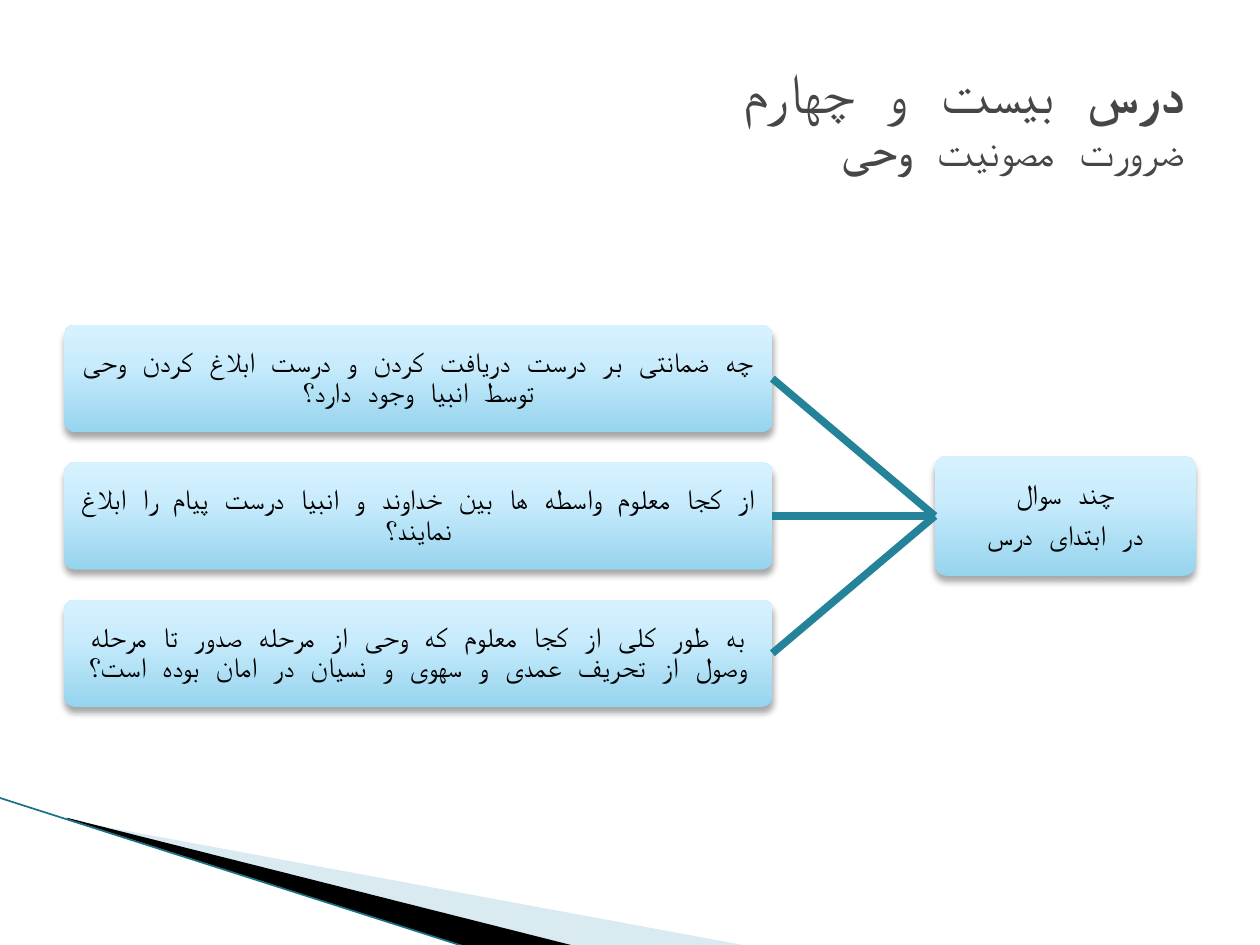
import pptx
import pptx.util
import pptx.oxml
from pptx.dml.color import RGBColor
from pptx.enum.shapes import MSO_CONNECTOR, MSO_SHAPE
from pptx.enum.text import MSO_ANCHOR, PP_ALIGN
from pptx.oxml.ns import nsdecls, qn
from pptx.util import Inches

BLACK = RGBColor(0x00, 0x00, 0x00)
GRAY = RGBColor(0x46, 0x46, 0x46)
TEAL = RGBColor(0x24, 0x82, 0x99)
EDGE = RGBColor(0x1B, 0x70, 0x82)
PALE = RGBColor(0xA0, 0xCB, 0xDC)
STOPS = [
    (0, RGBColor(0x96, 0xD4, 0xEE)),
    (65, RGBColor(0xC9, 0xEC, 0xFC)),
    (100, RGBColor(0xD7, 0xF2, 0xFF)),
]


def element(xml):
    """Parse one drawing element written as <a:tag ...>."""
    tag, rest = xml.split(" ", 1)
    return pptx.oxml.parse_xml(f"{tag} {nsdecls('a')} {rest}")


def add_text(para, text, font="Noto Sans Mono", size=16, color=BLACK, bold=False):
    """Add a formatted run of right-to-left text."""
    run = para.add_run()
    run.text = text
    run.font.name = font
    run.font.size = pptx.util.Pt(size)
    run.font.bold = bold
    run.font.color.rgb = color
    run.font._element.append(element(f'<a:cs typeface="{font}"/>'))


def set_para(para, align, **gaps):
    para.alignment = align
    para._p.get_or_add_pPr().set("rtl", "1")
    for name, value in gaps.items():
        setattr(para, name, value)


class Deck:
    def __init__(self):
        self.prs = pptx.Presentation()
        self.prs.slide_width = Inches(10)
        self.prs.slide_height = Inches(7.5)
        self.slide = self.prs.slides.add_slide(self.prs.slide_layouts[6])
        self.shapes = self.slide.shapes

    def wedge(self, points, color, alpha=100):
        spots = [(Inches(x), Inches(y)) for x, y in points]
        form = self.shapes.build_freeform(*spots[0])
        form.add_line_segments(spots[1:])
        shape = form.convert_to_shape()
        shape.shadow.inherit = False
        shape.fill.solid()
        shape.fill.fore_color.rgb = color
        shape.line.fill.background()
        if alpha < 100:
            tint = shape._element.spPr.find(".//" + qn("a:srgbClr"))
            tint.append(element(f'<a:alpha val="{alpha * 1000}"/>'))

    def line(self, start, end, color, width):
        link = self.shapes.add_connector(
            MSO_CONNECTOR.STRAIGHT, *(Inches(v) for v in start + end))
        link.line.color.rgb = color
        link.line.width = pptx.util.Pt(width)
        link._element.spPr.append(element("<a:effectLst />"))
        return link

    def join(self, root, leaf):
        link = self.line((0, 0), (1, 1), TEAL, 4.33)
        link.begin_connect(root, 1)
        link.end_connect(leaf, 3)

    def box(self, left, top, width, height, lines):
        shape = self.shapes.add_shape(
            MSO_SHAPE.ROUNDED_RECTANGLE,
            *(Inches(v) for v in (left, top, width, height)))
        shape.adjustments[0] = 0.1

        # Gradient rising from the bottom, no outline, soft shadow below
        stops = "".join(
            f'<a:gs pos="{pos * 1000}"><a:srgbClr val="{color}"/></a:gs>'
            for pos, color in STOPS)
        props = shape._element.spPr
        props.append(element(
            f'<a:gradFill rotWithShape="1"><a:gsLst>{stops}</a:gsLst>'
            '<a:lin ang="16200000" scaled="0"/></a:gradFill>'))
        shape.line.fill.background()
        shape.shadow.inherit = False
        props.find(qn("a:effectLst")).append(element(
            '<a:outerShdw blurRad="50800" dist="38100" dir="5400000" rotWithShape="0">'
            '<a:srgbClr val="000000"><a:alpha val="35000"/></a:srgbClr></a:outerShdw>'))

        frame = shape.text_frame
        frame.word_wrap = True
        frame.vertical_anchor = MSO_ANCHOR.MIDDLE
        frame.margin_left = frame.margin_right = Inches(0.03)
        frame.margin_top = frame.margin_bottom = Inches(0.03)
        for i, text in enumerate(lines):
            para = frame.add_paragraph() if i else frame.paragraphs[0]
            set_para(para, PP_ALIGN.CENTER, line_spacing=0.9,
                     space_after=pptx.util.Pt(5.6))
            add_text(para, text)
        return shape

    def title(self, left, top, width, height, rows):
        area = self.shapes.add_textbox(*(Inches(v) for v in (left, top, width, height)))
        frame = area.text_frame
        frame.word_wrap = True
        frame.vertical_anchor = MSO_ANCHOR.MIDDLE
        para = frame.paragraphs[0]
        set_para(para, PP_ALIGN.RIGHT)
        for i, (size, runs) in enumerate(rows):
            if i:
                para.add_line_break()
            for text, bold in runs:
                add_text(para, text, size=size, color=GRAY, bold=bold)


def main():
    deck = Deck()

    # Corner decoration
    deck.wedge([(0.55, 6.51), (5.95, 7.51), (4.56, 7.51), (0.55, 6.5)], PALE, 40)
    deck.wedge([(0.53, 6.49), (4.57, 7.51), (3.72, 7.52), (0.54, 6.5)], BLACK)
    deck.line((-0.01, 6.33), (3.71, 7.52), EDGE, 0.95)

    # Topic and its questions
    topic = deck.box(7.42, 3.62, 2.07, 0.95, ["چند سوال", "در ابتدای درس"])
    asks = [
        "چه ضمانتی بر درست دریافت کردن و درست ابلاغ کردن وحی توسط انبیا وجود دارد؟",
        "از کجا معلوم واسطه ها بین خداوند و انبیا درست پیام را ابلاغ نمایند؟",
        "به طور کلی از کجا معلوم که وحی از مرحله صدور تا مرحله وصول از تحریف عمدی و سهوی و نسیان در امان بوده است؟",
    ]
    for i, ask in enumerate(asks):
        leaf = deck.box(0.51, 2.58 + 1.09 * i, 5.62, 0.85, [ask])
        deck.join(topic, leaf)

    # Title
    deck.title(0.5, 0.3, 9, 1.25, [
        (32, [("درس ", True), ("بیست و چهارم", False)]),
        (24, [("ضرورت مصونیت ", False), ("وحی", True)]),
    ])

    deck.prs.save("out.pptx")


if __name__ == "__main__":
    main()
